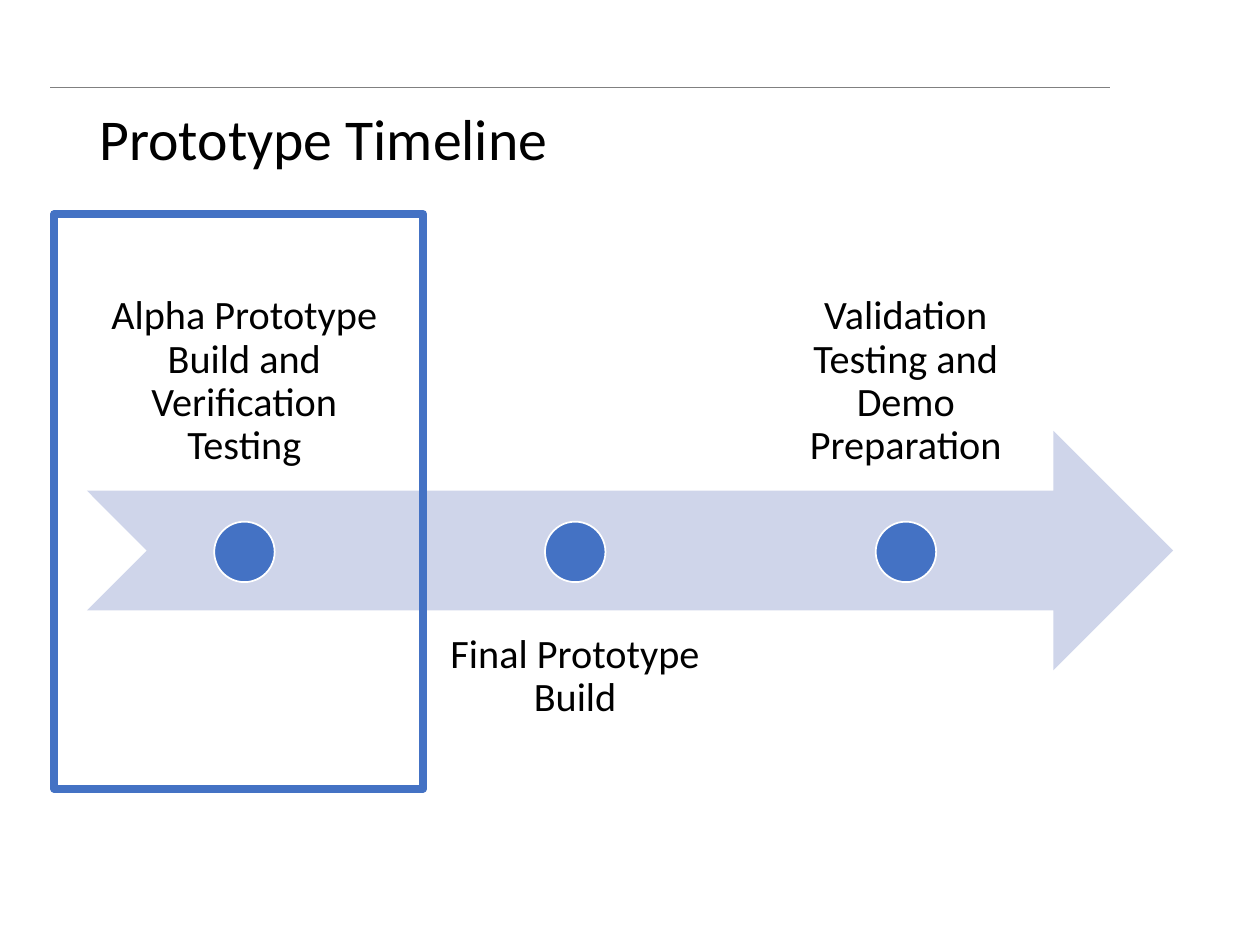
from pptx import Presentation
from pptx.dml.color import RGBColor
from pptx.enum import shapes, text
from pptx.oxml.ns import qn
from pptx.util import Inches, Pt
from lxml import etree

BLACK = RGBColor(0x00, 0x00, 0x00)
WHITE = RGBColor(0xFF, 0xFF, 0xFF)
GRAY = RGBColor(0x80, 0x80, 0x80)
BLUE = RGBColor(0x44, 0x72, 0xC4)
PALE = RGBColor(0xCF, 0xD5, 0xEA)

SHAPE = shapes.MSO_SHAPE
ANCHOR = text.MSO_ANCHOR
ALIGN = text.PP_ALIGN

STEPS = [
    "Alpha Prototype Build and Verification Testing",
    "Final Prototype Build",
    "Validation Testing and Demo Preparation",
]
LEFT, WIDE = 0.69, 8.62       # timeline band
TOP, HIGH = 2, 1.9            # upper label row and row height
LABEL, STEP = 2.5, 2.625      # label width and pitch
DOT = 0.48


def write(box, words, size=23, align=ALIGN.CENTER, anchor=ANCHOR.TOP, inset=None):
    frame = box.text_frame
    frame.word_wrap = True
    frame.auto_size = text.MSO_AUTO_SIZE.NONE
    frame.vertical_anchor = anchor
    if inset is not None:
        frame.margin_left = frame.margin_right = Inches(inset)
        frame.margin_top = frame.margin_bottom = Inches(inset)
    para = frame.paragraphs[0]
    para.alignment = align
    para.line_spacing = 0.9
    run = para.add_run()
    run.text = words
    run.font.size = Pt(size)
    run.font.name = "Calibri"
    run.font.color.rgb = BLACK


def draw(parent, kind, x, y, w, h, fill=None, line=None, width=1):
    shape = parent.add_shape(kind, Inches(x), Inches(y), Inches(w), Inches(h))
    shape.shadow.inherit = False
    if fill is None:
        shape.fill.background()
    else:
        shape.fill.solid()
        shape.fill.fore_color.rgb = fill
    if line is None:
        shape.line.fill.background()
    else:
        shape.line.color.rgb = line
        shape.line.width = Pt(width)
    return shape


def add_rule(slide):
    rule = slide.shapes.add_connector(
        shapes.MSO_CONNECTOR.STRAIGHT,
        Inches(0.4), Inches(0.69), Inches(8.81), Inches(0.69))
    rule.line.color.rgb = GRAY
    rule.line.width = Pt(0.25)
    etree.SubElement(rule._element.spPr, qn("a:effectLst"))


def add_title(slide):
    title = slide.shapes.title
    title.left, title.top = Inches(LEFT), Inches(0.4)
    title.width, title.height = Inches(WIDE), Inches(1.45)
    write(title, "Prototype Timeline", size=33, align=ALIGN.LEFT,
          anchor=ANCHOR.MIDDLE)


def add_steps(slide):
    group = slide.shapes.add_group_shape().shapes
    draw(group, SHAPE.NOTCHED_RIGHT_ARROW, LEFT, 3.42, WIDE, HIGH, fill=PALE)
    for i, words in enumerate(STEPS):
        # Labels alternate above and below the arrow
        below = i % 2
        x = LEFT + i * STEP
        y = TOP + below * 1.5 * HIGH
        label = group.add_textbox(Inches(x), Inches(y), Inches(LABEL), Inches(HIGH))
        write(label, words, inset=0.18,
              anchor=ANCHOR.TOP if below else ANCHOR.BOTTOM)
        draw(group, SHAPE.OVAL, x + (LABEL - DOT) / 2, 4.14, DOT, DOT,
             fill=BLUE, line=WHITE)


def main():
    deck = Presentation()
    deck.slide_width, deck.slide_height = Inches(10), Inches(7.5)
    slide = deck.slides.add_slide(deck.slide_layouts[5])
    add_rule(slide)
    add_title(slide)
    add_steps(slide)
    # Frame around the current step
    draw(slide.shapes, SHAPE.RECTANGLE, 0.43, 1.7, 2.93, 4.56, line=BLUE, width=4.5)
    deck.save("out.pptx")


if __name__ == "__main__":
    main()
